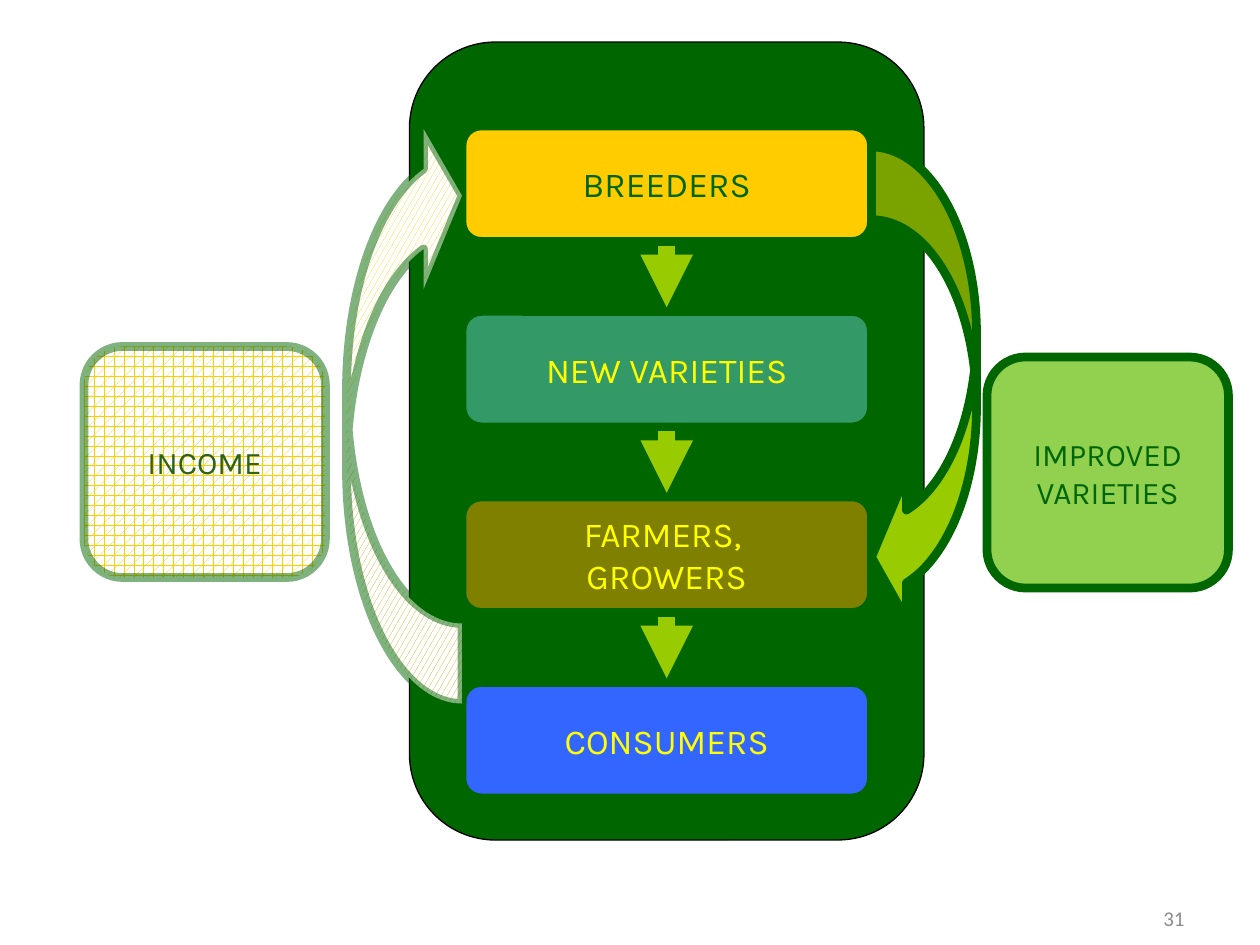
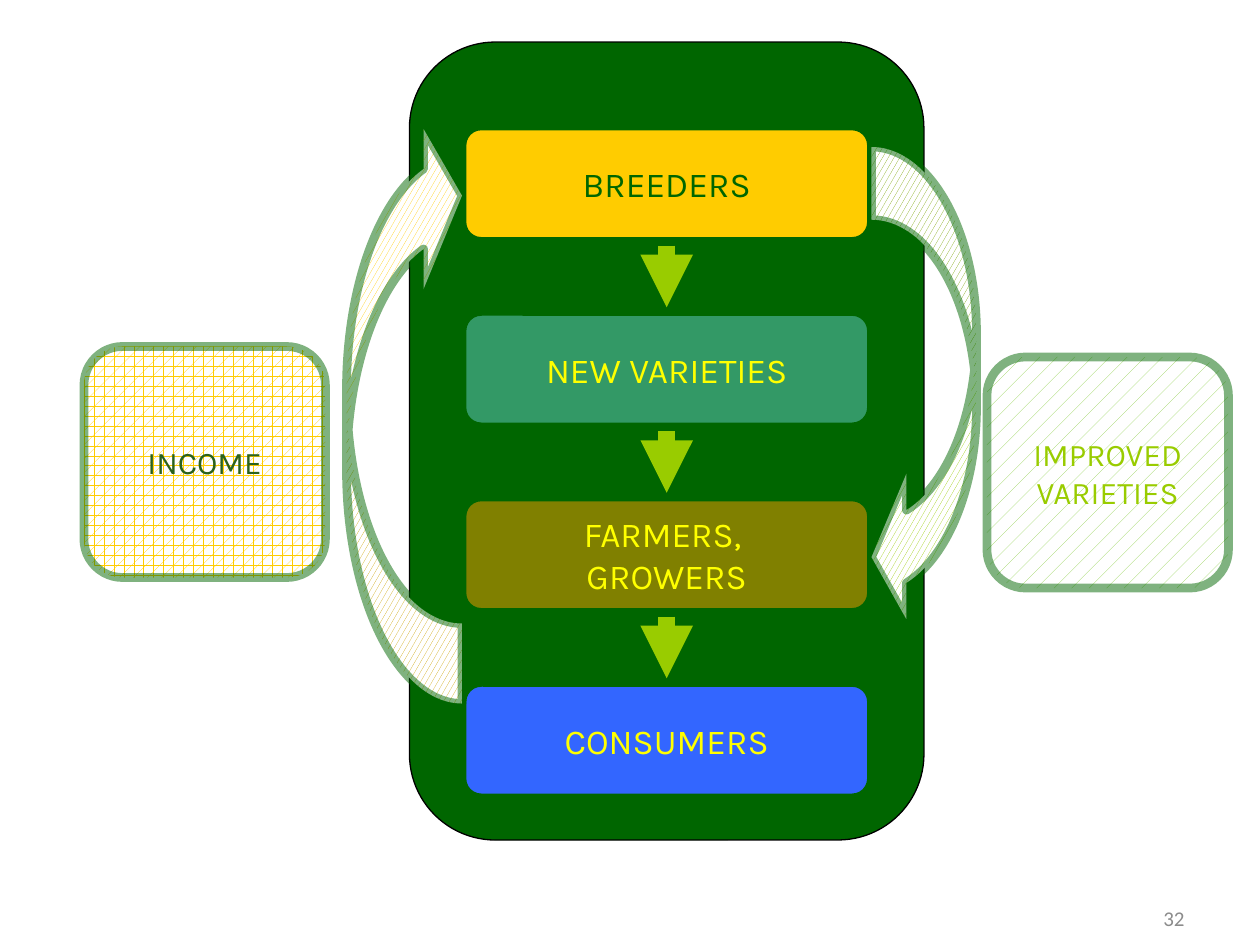
from dataclasses import dataclass
from typing import Any, Optional

from lxml.etree import SubElement
from pptx import Presentation
from pptx.dml.color import RGBColor
from pptx.enum.dml import MSO_LINE, MSO_PATTERN
from pptx.enum.shapes import MSO_CONNECTOR, MSO_SHAPE
from pptx.enum.text import MSO_ANCHOR, PP_ALIGN
from pptx.oxml.ns import qn
from pptx.util import Inches, Pt

COLS, ROWS = 120, 90
W, H = Inches(10), Inches(7.5)
CORNER = [0.167]
CURVE = [0.693, 1.387, 0.333]


@dataclass(frozen=True)
class Theme:
    """Colours, fonts and sizes shared by the slides."""
    dark: str = "006600"
    lime: str = "99CC00"
    light: str = "92D050"
    gold: str = "FFCC00"
    teal: str = "339966"
    olive: str = "808000"
    blue: str = "3366FF"
    yellow: str = "FFFF00"
    leaf: str = "2B621D"
    white: str = "FFFFFF"
    black: str = "000000"
    grey: str = "8C8C8C"
    font: str = "Karla"
    number_font: str = "Calibri"
    stage_size: float = 20
    side_size: float = 18
    number_size: float = 12
    border: float = 5
    hairline: float = 0.75
    arrow: float = 10


T = Theme()


@dataclass(frozen=True)
class Area:
    """A place on the grid, in columns and rows."""
    col: float
    row: float
    cols: float
    rows: float

    def emu(self) -> tuple[int, int, int, int]:
        """Give left, top, width and height."""
        return (int(self.col * W / COLS), int(self.row * H / ROWS),
                int(self.cols * W / COLS), int(self.rows * H / ROWS))


@dataclass(frozen=True)
class Look:
    """Fill, optional pattern and border of a shape."""
    fill: str
    pattern: Optional[MSO_PATTERN] = None
    line: str = T.dark
    width: float = T.border
    alpha: int = 100


@dataclass(frozen=True)
class Label:
    """Wording and type of a text."""
    text: str
    color: str
    size: float = T.side_size
    font: str = T.font
    align: PP_ALIGN = PP_ALIGN.CENTER
    wrap: bool = True


@dataclass(frozen=True)
class Stage:
    """One step of the chain from breeder to consumer."""
    text: str
    fill: str
    color: str = T.yellow


@dataclass(frozen=True)
class Scene:
    """What changes from slide to slide."""
    number: str
    dash: Optional[MSO_LINE]
    improved: Look
    improved_text: str
    flow: Look


STAGES = [
    Stage("BREEDERS", T.gold, T.dark),
    Stage("NEW VARIETIES", T.teal),
    Stage("FARMERS, \vGROWERS", T.olive),
    Stage("CONSUMERS", T.blue),
]
PANEL = Area(39, 4, 49, 76)
FIRST = Area(44, 12, 39, 11)
STEP = 53 / 3
ARROW_PAD = 0.4

SCENES = [
    Scene("31", None, Look(T.light), T.dark, Look(T.lime)),
    Scene("32", MSO_LINE.ROUND_DOT,
          Look(T.light, MSO_PATTERN.PERCENT_5, alpha=50), T.lime,
          Look(T.lime, MSO_PATTERN.LARGE_CONFETTI, alpha=50)),
]


def rgb(value: str) -> RGBColor:
    """Turn a hex string into a colour."""
    return RGBColor.from_string(value)


def write(sp: Any, label: Label) -> None:
    """Put one styled paragraph in a shape."""
    tf = sp.text_frame
    tf.word_wrap = label.wrap
    tf.vertical_anchor = MSO_ANCHOR.MIDDLE
    p = tf.paragraphs[0]
    p.text = label.text
    p.alignment = label.align
    p.font.name = label.font
    p.font.size = Pt(label.size)
    p.font.color.rgb = rgb(label.color)


def draw(shapes: Any, kind: MSO_SHAPE, area: Area, adj: list[float],
         look: Look, label: Optional[Label] = None) -> Any:
    """Draw a preset shape with its look and label."""
    sp = shapes.add_shape(kind, *area.emu())
    sp.shadow.inherit = False
    for i, value in enumerate(adj):
        sp.adjustments[i] = value
    if look.pattern is None:
        sp.fill.solid()
    else:
        sp.fill.patterned()
        sp.fill.pattern = look.pattern
        sp.fill.back_color.rgb = rgb(T.white)
    sp.fill.fore_color.rgb = rgb(look.fill)
    sp.line.color.rgb = rgb(look.line)
    sp.line.width = Pt(look.width)
    if look.alpha < 100:
        color = sp.line._get_or_add_ln().find(".//" + qn("a:srgbClr"))
        SubElement(color, qn("a:alpha"), val=str(look.alpha * 1000))
    if label:
        write(sp, label)
    return sp


def down_arrow(shapes: Any, area: Area, dash: Optional[MSO_LINE]) -> None:
    """Draw a thick arrow down the left edge of an area."""
    x, y, _, h = area.emu()
    c = shapes.add_connector(MSO_CONNECTOR.STRAIGHT, x, y, x, y + h)
    c.line.color.rgb = rgb(T.lime)
    c.line.width = Pt(T.arrow)
    if dash is not None:
        c.line.dash_style = dash
    SubElement(c.line._get_or_add_ln(), qn("a:tailEnd"), type="triangle")
    SubElement(c._element.spPr, qn("a:effectLst"))


def draw_chain(shapes: Any, dash: Optional[MSO_LINE]) -> None:
    """Draw the panel, its stages and the arrows between them."""
    draw(shapes, MSO_SHAPE.ROUNDED_RECTANGLE, PANEL, CORNER,
         Look(T.dark, line=T.black, width=T.hairline))
    for i, stage in enumerate(STAGES):
        area = Area(FIRST.col, FIRST.row + i * STEP, FIRST.cols, FIRST.rows)
        draw(shapes, MSO_SHAPE.ROUNDED_RECTANGLE, area, CORNER,
             Look(stage.fill),
             Label(stage.text, stage.color, T.stage_size, wrap=False))
    for i in range(len(STAGES) - 1):
        top = FIRST.row + i * STEP + FIRST.rows + ARROW_PAD
        length = STEP - FIRST.rows - 2 * ARROW_PAD
        down_arrow(shapes, Area(FIRST.col + FIRST.cols / 2, top, 0, length),
                   dash)


def build(prs: Any, scene: Scene) -> None:
    """Build one slide of the cycle."""
    s = prs.slides.add_slide(prs.slide_layouts[6])
    number = s.shapes.add_textbox(*Area(86, 85, 28, 4.8).emu())
    write(number, Label(scene.number, T.grey, T.number_size, T.number_font,
                        PP_ALIGN.RIGHT))
    draw_chain(s.shapes.add_group_shape().shapes, scene.dash)
    draw(s.shapes, MSO_SHAPE.ROUNDED_RECTANGLE, Area(94, 34, 23, 22), CORNER,
         scene.improved, Label("IMPROVED VARIETIES", scene.improved_text))
    draw(s.shapes, MSO_SHAPE.ROUNDED_RECTANGLE, Area(8, 33, 23, 22), CORNER,
         Look(T.gold, MSO_PATTERN.PLAID, alpha=50), Label("INCOME", T.leaf))
    draw(s.shapes, MSO_SHAPE.CURVED_LEFT_ARROW, Area(83, 14, 10, 46), CURVE,
         scene.flow)
    back = draw(s.shapes, MSO_SHAPE.CURVED_LEFT_ARROW, Area(33, 11, 11, 56),
                CURVE, Look(T.gold, MSO_PATTERN.LARGE_CONFETTI, alpha=50))
    back.rotation = 180


def main() -> None:
    """Build and save the presentation."""
    prs = Presentation()
    prs.slide_width, prs.slide_height = W, H
    for scene in SCENES:
        build(prs, scene)
    prs.save("out.pptx")


if __name__ == "__main__":
    main()
